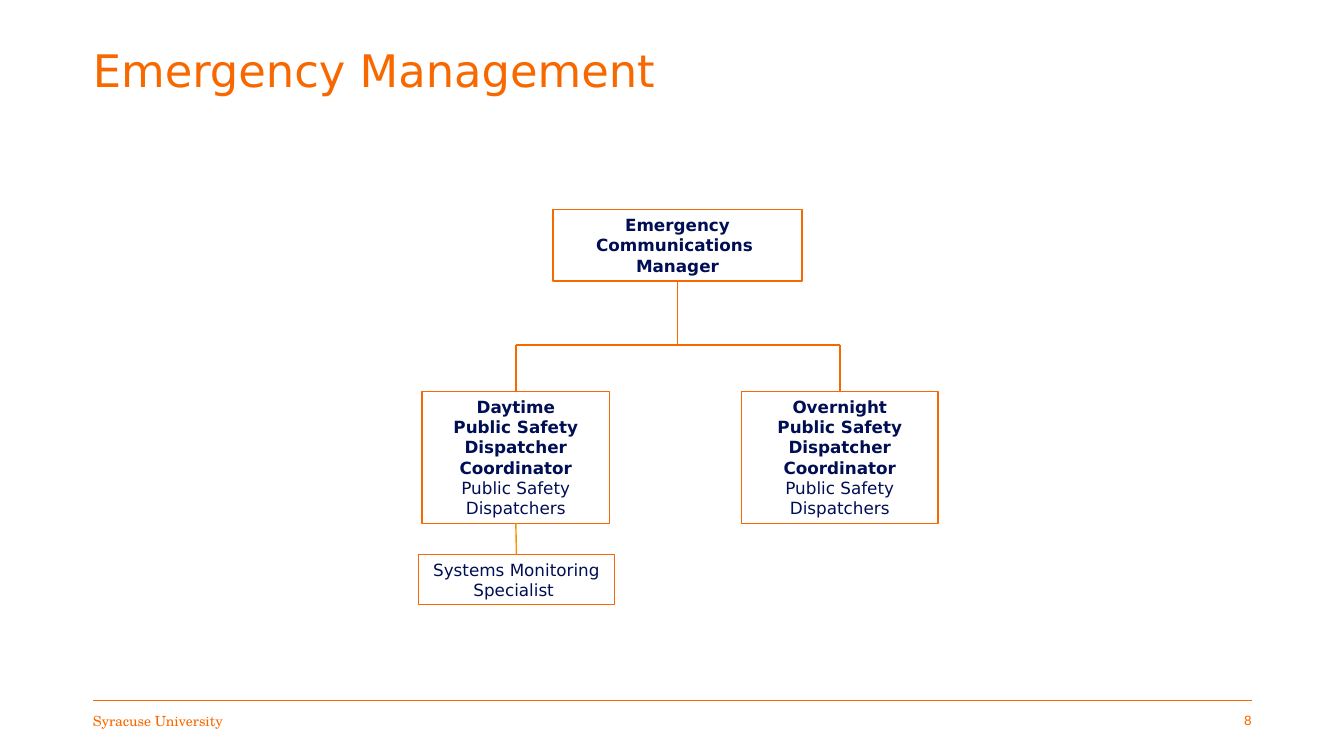
from pptx import Presentation, util as u
from pptx.dml.color import RGBColor
from pptx.enum import shapes, text
from lxml import etree

ORANGE, AMBER, NAVY = "F76900", "FF8E00", "000E54"
SANS, SERIF = "DejaVu Sans", "TeX Gyre Schola"
LEFT, MID, RIGHT = text.PP_ALIGN.LEFT, text.PP_ALIGN.CENTER, text.PP_ALIGN.RIGHT
A = "{http://schemas.openxmlformats.org/drawingml/2006/main}"


def write(frame, lines, align, inset=None, **look):
    """Fill a text frame with (words, bold) lines in one look."""
    form = {"word_wrap": True, "vertical_anchor": text.MSO_ANCHOR.MIDDLE}
    if inset is not None:
        form.update(margin_left=u.Cm(inset), margin_right=u.Cm(inset))
    for key, val in form.items():
        setattr(frame, key, val)
    for i, (words, bold) in enumerate(lines):
        par = frame.add_paragraph() if i else frame.paragraphs[0]
        par.alignment = align
        run = par.add_run()
        run.text = words
        run.font.color.rgb = RGBColor.from_string(look["color"])
        for key in ("name", "size"):
            setattr(run.font, key, look[key])
        run.font.bold = bold
    return frame


def link(start, end, color=ORANGE, width=1):
    """Draw a line; each end is an (x, y) point or a (box, side) pair."""
    pts = [p if isinstance(p[0], int) else (0, 0) for p in (start, end)]
    line = slide.shapes.add_connector(shapes.MSO_CONNECTOR.STRAIGHT, *pts[0], *pts[1])
    for p, join in ((start, line.begin_connect), (end, line.end_connect)):
        if not isinstance(p[0], int):
            join(*p)
    line.line.color.rgb = RGBColor.from_string(color)
    line.line.width = u.Pt(width)
    etree.SubElement(line._element.spPr, A + "effectLst")


deck = Presentation()
deck.slide_width, deck.slide_height = u.Cm(33.87), u.Cm(19.05)
slide = deck.slides.add_slide(deck.slide_layouts[5])

# Title
title = slide.shapes.title
spot = {"left": 2.34, "top": 0, "width": 29.21, "height": 3.68}
for key, val in spot.items():
    setattr(title, key, u.Cm(val))
write(title.text_frame, [("Emergency Management", False)], LEFT, 0,
      name=SANS, size=u.Pt(32), color=ORANGE)
title.text_frame.auto_size = text.MSO_AUTO_SIZE.NONE
title.text_frame.paragraphs[0].line_spacing = 0.9

# Footer
link((u.Cm(2.34), u.Cm(17.65)), (u.Cm(31.55), u.Cm(17.65)), width=0.5)
for words, x, align, name, size in (
        ("Syracuse University", 2.34, LEFT, SERIF, 10),
        ("8", 26.21, RIGHT, SANS, 9)):
    foot = slide.shapes.add_textbox(u.Cm(x), u.Cm(17.65), u.Cm(5.34), u.Cm(1.02))
    write(foot.text_frame, [(words, False)], align, 0,
          name=name, size=u.Pt(size), color=ORANGE)

# Staff boxes: left, top, width, height, lines
team = [("Public Safety Dispatcher Coordinator", True),
        ("Public Safety Dispatchers", False)]
staff = {
    "chief": (13.94, 5.28, 6.27, 1.8,
              [("Emergency Communications ", True), ("Manager", True)]),
    "day": (10.64, 9.86, 4.72, 3.33, [("Daytime", True)] + team),
    "night": (18.69, 9.86, 4.95, 3.33, [("Overnight", True)] + team),
    "systems": (10.54, 13.97, 4.95, 1.27,
                [("Systems Monitoring Specialist ", False)]),
}
box, mid = {}, {}
for key, (x, y, w, h, lines) in staff.items():
    item = slide.shapes.add_shape(shapes.MSO_SHAPE.RECTANGLE,
                                  u.Cm(x), u.Cm(y), u.Cm(w), u.Cm(h))
    item.shadow.inherit = False
    item.fill.background()
    item.line.color.rgb = RGBColor.from_string(ORANGE)
    item.line.width = u.Pt(1)
    write(item.text_frame, lines, MID, name=SANS, size=u.Pt(12), color=NAVY)
    box[key], mid[key] = item, item.left + item.width // 2

# Reporting lines
bus = u.Cm(8.69)
link((mid["day"], bus), (mid["night"], bus))
link((box["chief"], 2), (mid["chief"], bus))
for key in ("day", "night"):
    link((mid[key], bus), (box[key], 0))
link((box["systems"], 0), (box["day"], 2), AMBER)

deck.save("out.pptx")
